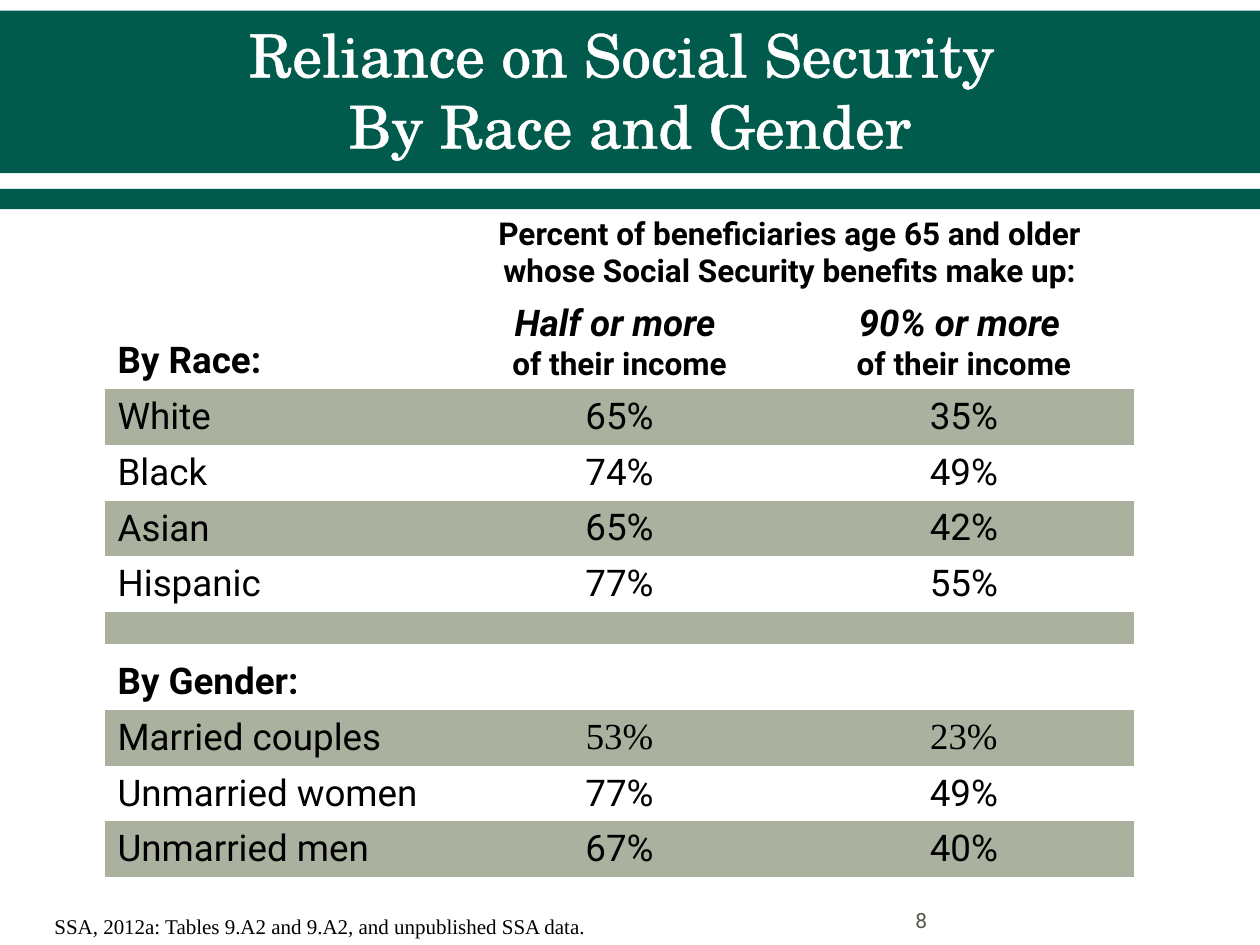
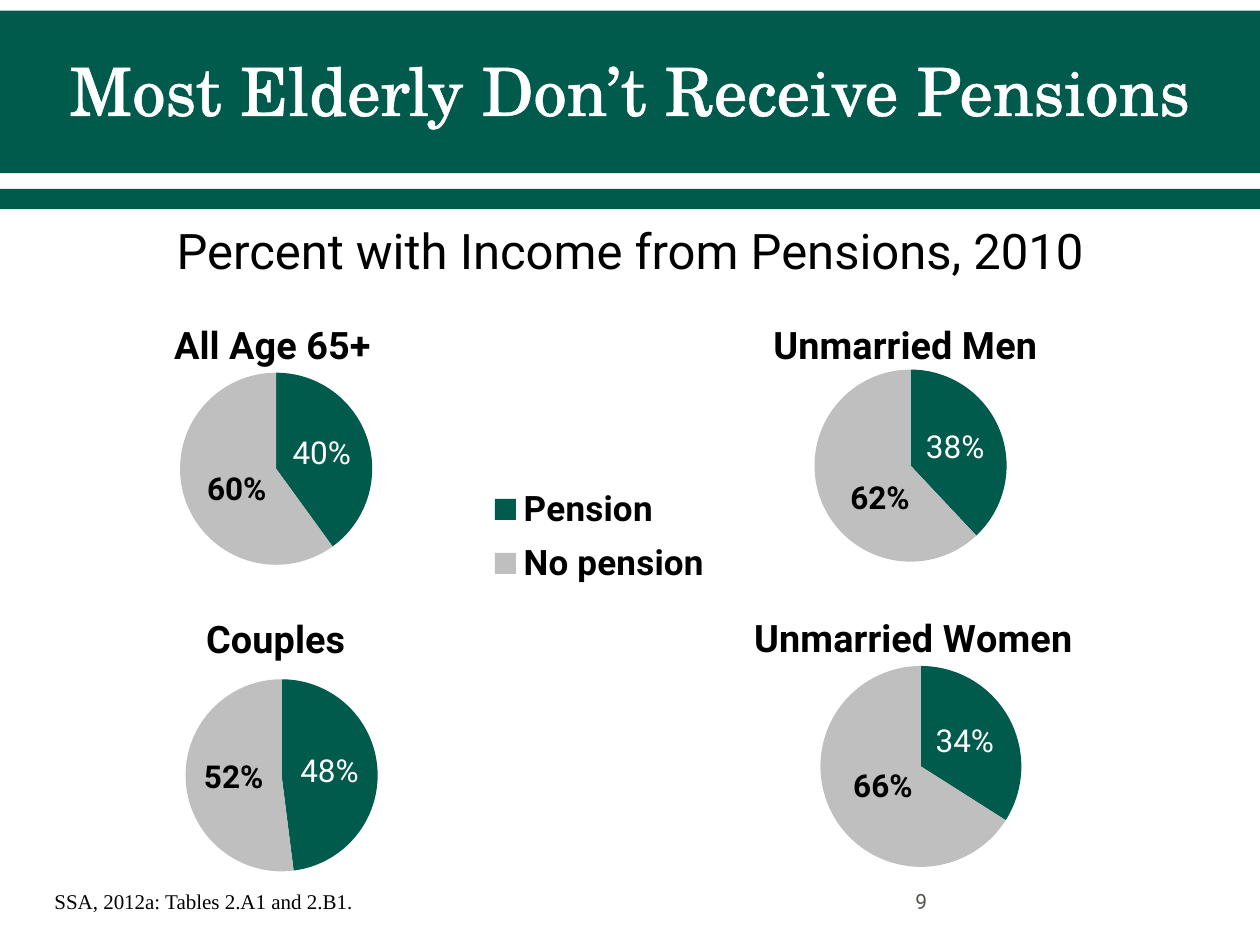
from lxml import etree
from pptx import Presentation
from pptx.chart.data import CategoryChartData
from pptx.dml.color import RGBColor
from pptx.enum.chart import XL_CHART_TYPE, XL_LABEL_POSITION, XL_LEGEND_POSITION
from pptx.enum.shapes import MSO_SHAPE
from pptx.enum.text import MSO_ANCHOR, MSO_AUTO_SIZE, PP_ALIGN
from pptx.oxml.ns import qn
from pptx.util import Inches, Pt

PIE = XL_CHART_TYPE.PIE
INSIDE = XL_LABEL_POSITION.CENTER
RIGHT = XL_LEGEND_POSITION.RIGHT
RECT = MSO_SHAPE.RECTANGLE
TOP, MIDDLE, BOTTOM = MSO_ANCHOR.TOP, MSO_ANCHOR.MIDDLE, MSO_ANCHOR.BOTTOM
FIXED = MSO_AUTO_SIZE.NONE
LEFT, CENTER = PP_ALIGN.LEFT, PP_ALIGN.CENTER

COLORS = {
    "green": "005B4D", "sage": "ABB19F", "gray": "BFBFBF",
    "page": "55554A", "black": "000000", "white": "FFFFFF",
}
SANS, SERIF, HEAD = "Roboto", "Times New Roman", "TeX Gyre Schola"
COLS, ROWS = 120, 90
WIDTH, HEIGHT = Inches(10), Inches(7.5)
PLAIN = "{2D5ABB26-0587-4C30-8999-92F81FD0307C}"

RACE = [
    ("White", "65%", "35%"), ("Black", "74%", "49%"),
    ("Asian", "65%", "42%"), ("Hispanic", "77%", "55%"),
]
GENDER = [
    ("Married couples", "53%", "23%"), ("Unmarried women", "77%", "49%"),
    ("Unmarried men", "67%", "40%"),
]
PIES = [
    dict(name="All Age 65+", share=40, box=(8, 28, 61, 30),
         plot=(0.15, 0.24, 0.3, 0.63), head=(0.13, 0.06),
         nudge=(0.01, 0.02), key=(0.62, 0.58, 0.37, 0.38)),
    dict(name="Couples", share=48, box=(4.2, 56, 44.8, 30),
         plot=(0.3, 0.29, 0.41, 0.61), head=(0.33, 0.06)),
    dict(name="Unmarried Men", share=38, box=(64, 28, 45, 30),
         plot=(0.3, 0.24, 0.41, 0.61), head=(0.2, 0.06),
         nudge=(0.03, 0.05)),
    dict(name="Unmarried Women", share=34, box=(59, 55.2, 58, 30.7),
         plot=(0.33, 0.26, 0.33, 0.64), head=(0.21, 0.08),
         nudge=(0.01, -0.01)),
]


def rgb(name):
    return RGBColor.from_string(COLORS[name])


def grid(box):
    x, y, w, h = box
    return (round(x * WIDTH / COLS), round(y * HEIGHT / ROWS),
            round(w * WIDTH / COLS), round(h * HEIGHT / ROWS))


def style(font, size=21, color="black", face=SANS, bold=False, italic=False):
    font.size, font.name = Pt(size), face
    font.bold, font.italic = bold, italic
    font.color.rgb = rgb(color)


def text(frame, *lines, align=LEFT, spacing=None, **fmt):
    for i, line in enumerate(lines):
        words, extra = line if isinstance(line, tuple) else (line, {})
        para = frame.add_paragraph() if i else frame.paragraphs[0]
        para.text = words
        para.alignment = align
        if spacing:
            para.line_spacing = spacing
        for run in para.runs:
            style(run.font, **{**fmt, **extra})


def note(slide, box, words, anchor=TOP, **fmt):
    frame = slide.shapes.add_textbox(*grid(box)).text_frame
    frame.word_wrap = True
    frame.vertical_anchor = anchor
    text(frame, words, **fmt)


def outline(run, color):
    line = etree.Element(qn("a:ln"), w=str(Pt(1.1)))
    fill = etree.SubElement(line, qn("a:solidFill"))
    etree.SubElement(fill, qn("a:srgbClr"), val=COLORS[color])
    run._r.get_or_add_rPr().insert(0, line)


def header(slide, box, words, size):
    title = slide.shapes.title
    for band in ((0, 1, COLS, 15.5), (0, 18, COLS, 1.92)):
        bar = slide.shapes.add_shape(RECT, *grid(band))
        bar.shadow.inherit = False
        bar.fill.solid()
        bar.fill.fore_color.rgb = rgb("green")
        bar.line.fill.background()
        title.element.addprevious(bar.element)
    title.left, title.top, title.width, title.height = grid(box)
    frame = title.text_frame
    frame.auto_size = FIXED
    frame.vertical_anchor = MIDDLE
    text(frame, words, align=CENTER, size=size, color="white", face=HEAD)
    for run in frame.paragraphs[0].runs:
        outline(run, "white")


def footer(slide, source, page, top, page_top):
    note(slide, (4, top, 61, 3.6), source, size=12, face=SERIF)
    note(slide, (86, page_top, 28, 4.8), page, MIDDLE, size=12, color="page")


def cell(table, row, col, *lines, anchor=TOP, **fmt):
    spot = table.cell(row, col)
    spot.vertical_anchor = anchor
    text(spot.text_frame, *lines, align=CENTER if col else LEFT, **fmt)


def fill_rows(table, start, people):
    for row, (group, *values) in enumerate(people, start):
        cell(table, row, 0, group, anchor=MIDDLE)
        face = SERIF if group == "Married couples" else SANS
        for col, value in enumerate(values, 1):
            cell(table, row, col, value, face=face)


def reliance(slide, box):
    gap = 2 + len(RACE)
    heights = [8.2, 8.8] + [5.25] * len(RACE) + [3, 6.3] + [5.25] * len(GENDER)
    table = slide.shapes.add_table(len(heights), 3, *grid(box)).table
    table.first_row = table.horz_banding = False
    table._tbl.tblPr.find(qn("a:tableStyleId")).text = PLAIN
    for col, width in zip(table.columns, (32.4, 33.2, 32.4)):
        col.width = round(width * WIDTH / COLS)
    for i, (row, height) in enumerate(zip(table.rows, heights)):
        row.height = round(height * HEIGHT / ROWS)
        for spot in row.cells:
            if i > 1 and i % 2 == 0:
                spot.fill.solid()
                spot.fill.fore_color.rgb = rgb("sage")
            else:
                spot.fill.background()
            if i == gap:
                para = spot.text_frame.paragraphs[0]._p
                etree.SubElement(para, qn("a:endParaRPr"), sz="900")
    table.cell(0, 1).merge(table.cell(0, 2))
    cell(table, 0, 1, "Percent of beneficiaries age 65 and older "
         "whose Social Security benefits make up:",
         anchor=BOTTOM, size=18, bold=True)
    for col, share in enumerate(("Half or more ", "90% or more "), 1):
        cell(table, 1, col, (share, dict(size=21, italic=True)),
             "of their income", size=18, bold=True)
    cell(table, 1, 0, "By Race:", anchor=BOTTOM, bold=True)
    cell(table, gap + 1, 0, "By Gender:", anchor=BOTTOM, bold=True)
    fill_rows(table, 2, RACE)
    fill_rows(table, gap + 2, GENDER)


def place(part, index, spot, target=None, edge=True):
    layout = part.find(qn("c:layout"))
    if layout is None:
        layout = etree.Element(qn("c:layout"))
        part.insert(index, layout)
    for child in list(layout):
        layout.remove(child)
    manual = etree.SubElement(layout, qn("c:manualLayout"))
    values = [("layoutTarget", target)] if target else []
    if edge:
        values += [("xMode", "edge"), ("yMode", "edge")]
    values += zip("xywh", spot)
    for tag, value in values:
        etree.SubElement(manual, qn("c:" + tag), val=str(value))


def pie(slide, name, share, box, plot, head, nudge=None, key=None):
    data = CategoryChartData()
    data.categories = ["Pension", "No pension"]
    data.add_series(name, (share, 100 - share))
    chart = slide.shapes.add_chart(PIE, *grid(box), data).chart
    root = chart._chartSpace
    back = etree.Element(qn("c:spPr"))
    etree.SubElement(back, qn("a:noFill"))
    line = etree.SubElement(back, qn("a:ln"))
    etree.SubElement(line, qn("a:noFill"))
    root.find(qn("c:chart")).addnext(back)
    style(chart.font, size=18)

    chart.has_title = True
    text(chart.chart_title.text_frame, name, align=CENTER, size=21.6, bold=True)
    place(next(root.iter(qn("c:title"))), 1, head)
    place(next(root.iter(qn("c:plotArea"))), 0, plot, "inner")

    chart.plots[0].vary_by_categories = True
    looks = (("green", "white", False), ("gray", "black", True))
    for i, (fill, color, bold) in enumerate(looks):
        point = chart.plots[0].series[0].points[i]
        point.format.fill.solid()
        point.format.fill.fore_color.rgb = rgb(fill)
        point.format.line.fill.background()
        style(point.data_label.font, size=18, color=color, bold=bold)
        point.data_label.position = INSIDE
    labels = list(root.iter(qn("c:dLbl")))
    for label in labels:
        label.find(qn("c:showVal")).set("val", "0")
        label.find(qn("c:showPercent")).set("val", "1")
    if nudge:
        place(labels[1], 1, nudge, edge=False)

    chart.has_legend = bool(key)
    if key:
        chart.legend.position = RIGHT
        chart.legend.include_in_layout = False
        style(chart.legend.font, size=20, bold=True)
        place(next(root.iter(qn("c:legend"))), 1, key)


def main():
    deck = Presentation()
    deck.slide_width, deck.slide_height = WIDTH, HEIGHT
    layout = deck.slide_layouts[5]

    slide = deck.slides.add_slide(layout)
    header(slide, (6, 2, 108, 13),
           "Reliance on Social Security \vBy Race and Gender", 34)
    reliance(slide, (10, 20, 98, 64.4))
    footer(slide, "SSA, 2012a: Tables 9.A2 and 9.A2, and unpublished SSA data.",
           "8", 86.4, 85.2)

    slide = deck.slides.add_slide(layout)
    header(slide, (1, 1, 118, 15), "Most Elderly Don’t Receive Pensions", 38)
    note(slide, (0, 21, COLS, 8), "Percent with Income from Pensions, 2010",
         align=CENTER, spacing=0.9, size=28)
    for spec in PIES:
        pie(slide, **spec)
    footer(slide, "SSA, 2012a: Tables 2.A1 and 2.B1.", "9", 84, 83.4)

    deck.save("out.pptx")


if __name__ == "__main__":
    main()
